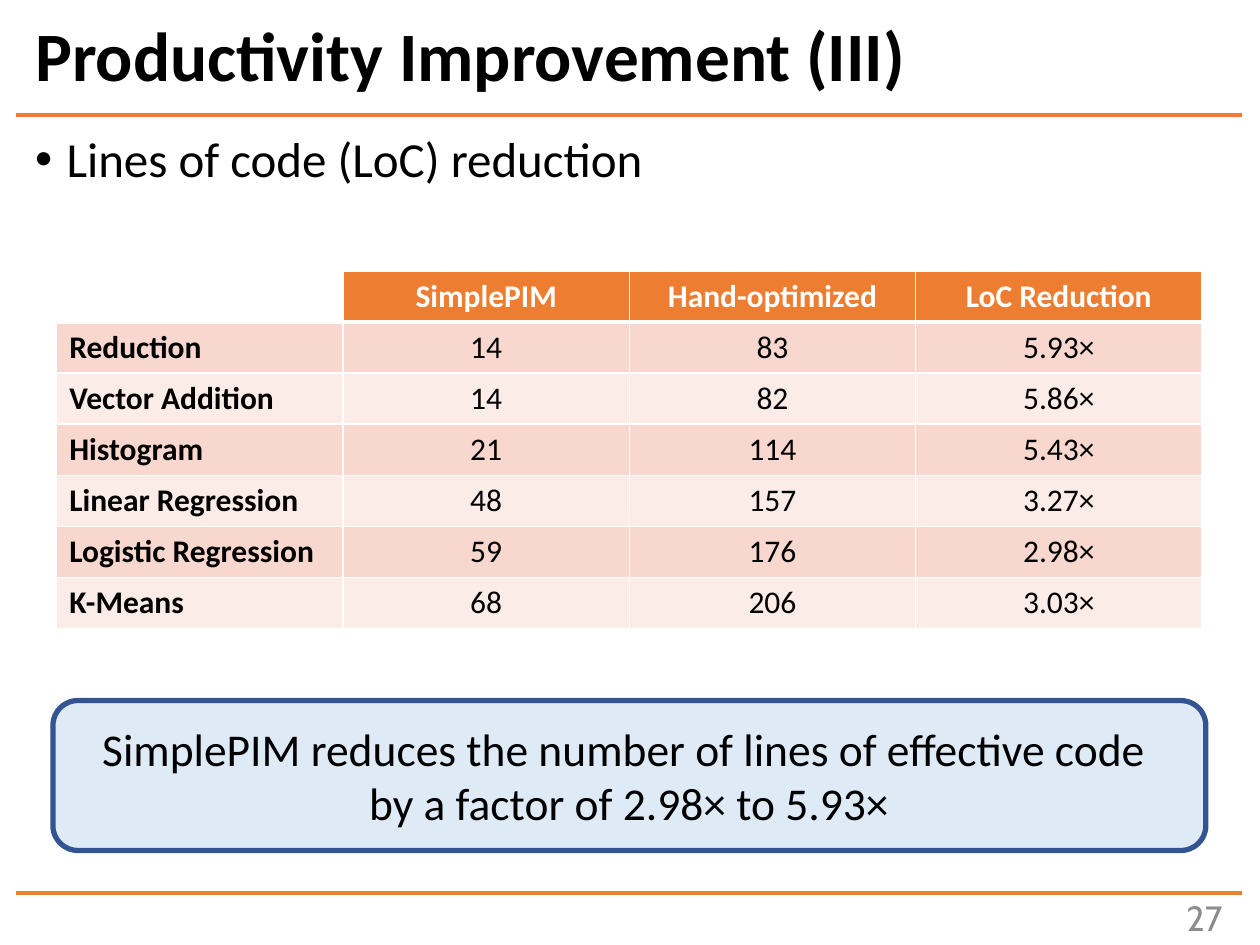
from dataclasses import dataclass

from lxml.etree import SubElement
from pptx import Presentation
from pptx.dml.color import RGBColor
from pptx.enum.shapes import MSO_CONNECTOR, MSO_SHAPE
from pptx.enum.text import MSO_ANCHOR, MSO_AUTO_SIZE, PP_ALIGN
from pptx.oxml.ns import qn
from pptx.util import Inches, Pt


@dataclass(frozen=True)
class Theme:
    font: str = "Calibri"
    number_font: str = "Cabin"
    text: str = "000000"
    white: str = "FFFFFF"
    accent: str = "ED7D31"
    bands: tuple = ("F8D7CE", "FCECE8")
    callout_fill: str = "DEEBF7"
    callout_line: str = "325491"
    muted: str = "8C8C8C"
    title_size: float = 39.6
    body_size: int = 28
    callout_size: int = 26
    table_size: int = 18
    number_size: int = 20


THEME = Theme()

HEADER = ("", "SimplePIM", "Hand-optimized", "LoC Reduction")
ROWS = (
    ("Reduction", "14", "83", "5.93×"),
    ("Vector Addition", "14", "82", "5.86×"),
    ("Histogram", "21", "114", "5.43×"),
    ("Linear Regression", "48", "157", "3.27×"),
    ("Logistic Regression", "59", "176", "2.98×"),
    ("K-Means", "68", "206", "3.03×"),
)


def rgb(value):
    return RGBColor.from_string(value)


def inches(box):
    return [Inches(value) for value in box]


def style_text(tf, size, color=THEME.text, bold=False, align=PP_ALIGN.LEFT,
               font=THEME.font):
    for p in tf.paragraphs:
        p.alignment = align
        for r in p.runs:
            r.font.name = font
            r.font.size = Pt(size)
            r.font.bold = bold
            r.font.color.rgb = rgb(color)


def add_rule(s, left, right, y):
    line = s.shapes.add_connector(MSO_CONNECTOR.STRAIGHT,
                                  *inches((left, y, right, y)))
    line.line.color.rgb = rgb(THEME.accent)
    line.line.width = Pt(2.25)
    SubElement(line._element.spPr, qn("a:effectLst"))


def add_title(s, box, text):
    sp = s.shapes.title
    sp.left, sp.top, sp.width, sp.height = inches(box)
    tf = sp.text_frame
    tf.text = text
    tf.word_wrap = True
    tf.auto_size = MSO_AUTO_SIZE.NONE
    tf.vertical_anchor = MSO_ANCHOR.MIDDLE
    tf.paragraphs[0].line_spacing = 0.9
    style_text(tf, THEME.title_size, bold=True)


def add_bullet(s, box, text):
    tf = s.shapes.add_textbox(*inches(box)).text_frame
    tf.word_wrap = True
    tf.text = text
    p = tf.paragraphs[0]
    p.line_spacing = 0.9
    pPr = p._p.get_or_add_pPr()
    pPr.set("marL", str(Inches(0.25)))
    pPr.set("indent", str(-Inches(0.25)))
    SubElement(pPr, qn("a:buFont"), typeface="Arial")
    SubElement(pPr, qn("a:buChar"), char="•")
    style_text(tf, THEME.body_size)


def set_borders(cell, bottom_width):
    tcPr = cell._tc.get_or_add_tcPr()
    widths = {"a:lnL": 1, "a:lnR": 1, "a:lnT": 1, "a:lnB": bottom_width}
    for position, (tag, width) in enumerate(widths.items()):
        line = tcPr.makeelement(qn(tag), {"w": str(Pt(width))})
        fill = SubElement(line, qn("a:solidFill"))
        SubElement(fill, qn("a:srgbClr"), val=THEME.white)
        tcPr.insert(position, line)  # borders come before the cell fill


def add_loc_table(s, box):
    data = (HEADER, *ROWS)
    table = s.shapes.add_table(len(data), len(HEADER), *inches(box)).table
    table.horz_banding = False
    for i, values in enumerate(data):
        table.rows[i].height = Inches(box[3] / len(data))
        is_header = i == 0
        for j, value in enumerate(values):
            cell = table.cell(i, j)
            cell.text_frame.text = value
            style_text(cell.text_frame, THEME.table_size,
                       color=THEME.white if is_header else THEME.text,
                       bold=is_header or j == 0,
                       align=PP_ALIGN.CENTER if j else PP_ALIGN.LEFT)
            if value:
                fill = THEME.accent if is_header else THEME.bands[(i - 1) % 2]
                cell.fill.solid()
                cell.fill.fore_color.rgb = rgb(fill)
            else:
                cell.fill.background()
            set_borders(cell, 3 if is_header else 1)


def add_callout(s, box, text):
    sp = s.shapes.add_shape(MSO_SHAPE.ROUNDED_RECTANGLE, *inches(box))
    sp.shadow.inherit = False
    sp.fill.solid()
    sp.fill.fore_color.rgb = rgb(THEME.callout_fill)
    sp.line.color.rgb = rgb(THEME.callout_line)
    sp.line.width = Pt(3)
    tf = sp.text_frame
    tf.word_wrap = True
    tf.vertical_anchor = MSO_ANCHOR.MIDDLE
    tf.text = text
    style_text(tf, THEME.callout_size, align=PP_ALIGN.CENTER)


def add_page_number(s, box, number):
    tf = s.shapes.add_textbox(*inches(box)).text_frame
    tf.word_wrap = True
    tf.vertical_anchor = MSO_ANCHOR.MIDDLE
    tf.text = number
    style_text(tf, THEME.number_size, THEME.muted, align=PP_ALIGN.RIGHT,
               font=THEME.number_font)


def main():
    prs = Presentation()
    prs.slide_width, prs.slide_height = Inches(10), Inches(7.5)
    s = prs.slides.add_slide(prs.slide_layouts[5])

    # Frame: page number and the rules under the title and above the footer
    add_page_number(s, (8.72, 7.08, 1.08, 0.4), "27")
    for y in (0.91, 7.09):
        add_rule(s, 0.13, 9.86, y)

    # Content
    add_title(s, (0.18, 0.14, 9.73, 0.66), "Productivity Improvement (III)")
    add_bullet(s, (0.18, 1.02, 9.53, 0.6), "Lines of code (LoC) reduction")
    add_loc_table(s, (0.45, 2.15, 9.09, 2.84))
    add_callout(s, (0.42, 5.56, 9.15, 1.19),
                "SimplePIM reduces the number of lines of effective code \n"
                "by a factor of 2.98× to 5.93×")

    prs.save("out.pptx")


if __name__ == "__main__":
    main()
